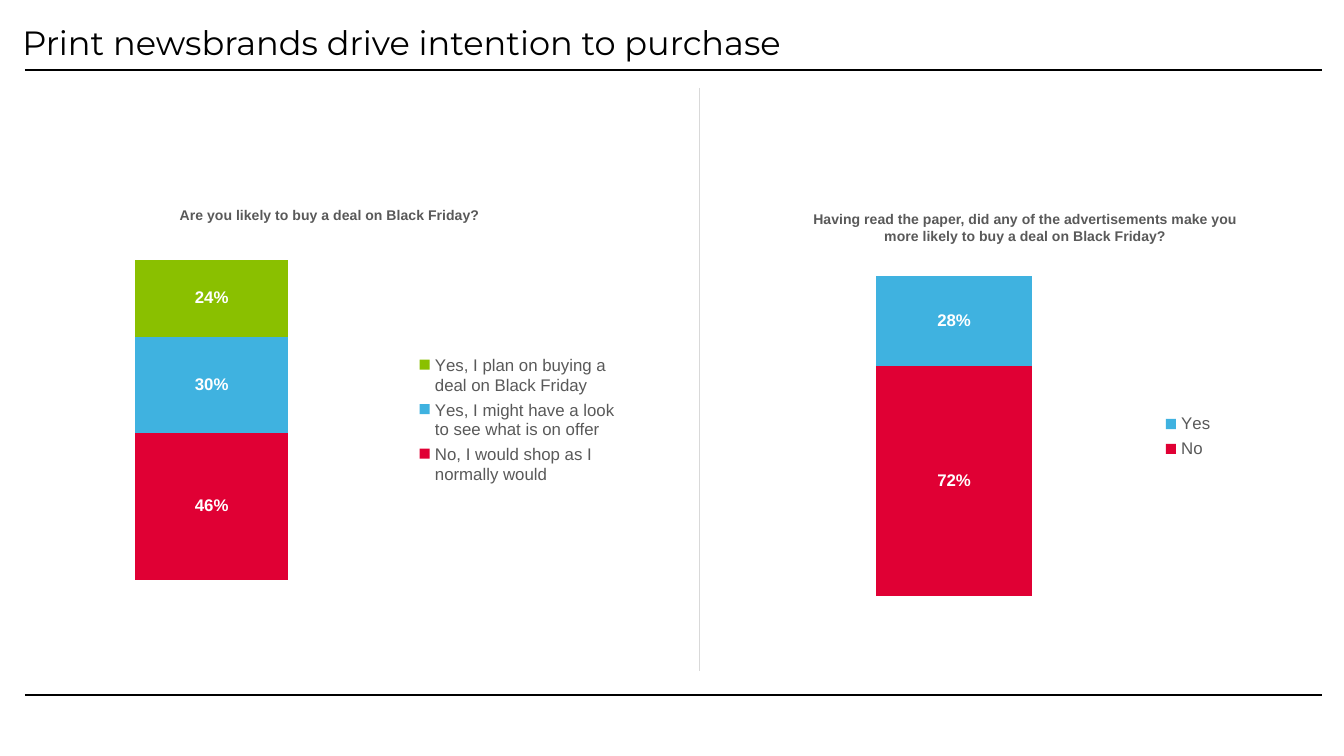
from dataclasses import dataclass

from lxml import etree
from pptx import Presentation
from pptx.chart.data import CategoryChartData
from pptx.dml.color import RGBColor
from pptx.enum.chart import XL_CHART_TYPE, XL_LABEL_POSITION, XL_LEGEND_POSITION
from pptx.enum.shapes import MSO_CONNECTOR
from pptx.enum.text import MSO_ANCHOR, PP_ALIGN
from pptx.oxml import parse_xml
from pptx.oxml.ns import nsdecls, qn
from pptx.util import Pt

PX = 914400 / 134.4
BLACK = RGBColor(0x00, 0x00, 0x00)
WHITE = RGBColor(0xFF, 0xFF, 0xFF)
GREY = RGBColor(0x59, 0x59, 0x59)
PALE_GREY = RGBColor(0xD9, 0xD9, 0xD9)
RED = RGBColor(0xE0, 0x00, 0x34)
BLUE = RGBColor(0x3F, 0xB2, 0xE0)
GREEN = RGBColor(0x8A, 0xC0, 0x00)

STACKED = XL_CHART_TYPE.COLUMN_STACKED_100
LABEL_CENTER = XL_LABEL_POSITION.CENTER
LEGEND_RIGHT = XL_LEGEND_POSITION.RIGHT
STRAIGHT = MSO_CONNECTOR.STRAIGHT
MIDDLE = MSO_ANCHOR.MIDDLE
LEFT, CENTER = PP_ALIGN.LEFT, PP_ALIGN.CENTER


@dataclass
class Area:
    left: int
    top: int
    width: int
    height: int

    def emu(self) -> tuple[int, ...]:
        return tuple(emu(px) for px in (self.left, self.top, self.width, self.height))


@dataclass
class Answer:
    label: str
    share: float
    color: RGBColor


@dataclass
class Question:
    text: str
    heading: Area
    chart: Area
    plot: Area  # measured from the chart's corner
    answers: list[Answer]


@dataclass
class Rule:
    start: tuple[int, int]
    end: tuple[int, int]
    color: RGBColor
    weight: float


RULES = [
    Rule((25, 70), (1322, 70), BLACK, 0.75),
    Rule((25, 695), (1322, 695), BLACK, 0.75),
    Rule((699, 88), (699, 671), PALE_GREY, 0.5),
]
QUESTIONS = [
    Question(
        "Are you likely to buy a deal on Black Friday?",
        Area(28, 199, 603, 31),
        Area(9, 254, 622, 333),
        Area(12, 6, 382, 320),
        [
            Answer("No, I would shop as I normally would", 0.46, RED),
            Answer("Yes, I might have a look to see what is on offer", 0.30, BLUE),
            Answer("Yes, I plan on buying a deal on Black Friday", 0.24, GREEN),
        ],
    ),
    Question(
        "Having read the paper, did any of the advertisements make you "
        "more likely to buy a deal on Black Friday?",
        Area(783, 204, 484, 47),
        Area(747, 270, 480, 333),
        Area(11, 6, 392, 320),
        [Answer("No", 0.72, RED), Answer("Yes", 0.28, BLUE)],
    ),
]


def emu(px: int) -> int:
    return round(px * PX)


def style_font(font, size: float, color: RGBColor, name: str = "Arial", bold: bool = False) -> None:
    font.name, font.size, font.bold = name, Pt(size), bold
    font.color.rgb = color


def fill_text(box, text: str, *, size: float, color: RGBColor, name: str = "Arial",
              bold: bool = False, align=CENTER, line_spacing: float = 1.0) -> None:
    frame = box.text_frame
    frame.word_wrap = True
    frame.vertical_anchor = MIDDLE
    para = frame.paragraphs[0]
    para.alignment, para.line_spacing = align, line_spacing
    span = para.add_run()
    span.text = text
    style_font(span.font, size, color, name, bold)


def draw_rule(page, rule: Rule) -> None:
    line = page.shapes.add_connector(STRAIGHT, *map(emu, rule.start + rule.end))
    line.line.color.rgb = rule.color
    line.line.width = Pt(rule.weight)
    etree.SubElement(line._element.spPr, qn("a:effectLst"))


def place_plot(chart, plot: Area, area: Area) -> None:
    """Fix the inner plot area as fractions of the chart."""
    fractions = {
        "x": plot.left / area.width,
        "y": plot.top / area.height,
        "w": plot.width / area.width,
        "h": plot.height / area.height,
    }
    modes = '<c:layoutTarget val="inner"/><c:xMode val="edge"/><c:yMode val="edge"/>'
    values = "".join(f'<c:{key} val="{value:.3f}"/>' for key, value in fractions.items())
    layout = parse_xml(
        f'<c:layout {nsdecls("c")}><c:manualLayout>{modes}{values}</c:manualLayout></c:layout>')
    plot_area = chart._chartSpace.chart.plotArea
    for old in plot_area.findall(qn("c:layout")):
        plot_area.remove(old)
    plot_area.insert(0, layout)


def draw_chart(page, question: Question) -> None:
    data = CategoryChartData(number_format="0%")
    data.categories = ["1"]
    for answer in question.answers:
        data.add_series(answer.label, [answer.share])
    chart = page.shapes.add_chart(STACKED, *question.chart.emu(), data).chart
    style_font(chart.font, 10, BLACK)
    chart.has_title = False
    chart.has_legend = True
    chart.legend.position = LEGEND_RIGHT
    chart.legend.include_in_layout = False
    style_font(chart.legend.font, 9, GREY)

    chart.category_axis.visible = False
    value_axis = chart.value_axis
    value_axis.visible = False
    value_axis.has_major_gridlines = False
    value_axis.minimum_scale, value_axis.maximum_scale = 0, 1
    value_axis.tick_labels.number_format = "0%"
    value_axis.tick_labels.number_format_is_linked = False

    bars = chart.plots[0]
    bars.gap_width, bars.overlap, bars.vary_by_categories = 150, 100, False
    for series, answer in zip(bars.series, question.answers):
        series.format.fill.solid()
        series.format.fill.fore_color.rgb = answer.color
        labels = series.data_labels
        labels.show_value = True
        labels.position = LABEL_CENTER
        labels.number_format = "0%"
        labels.number_format_is_linked = False
        style_font(labels.font, 9, WHITE, bold=True)
    place_plot(chart, question.plot, question.chart)


def draw_question(page, question: Question) -> None:
    draw_chart(page, question)
    heading = page.shapes.add_textbox(*question.heading.emu())
    fill_text(heading, question.text, size=7.5, color=GREY, bold=True)


def main() -> None:
    deck = Presentation()
    deck.slide_width, deck.slide_height = emu(1344), emu(756)
    page = deck.slides.add_slide(deck.slide_layouts[5])
    title = page.shapes.title
    title.left, title.top, title.width, title.height = Area(9, 19, 1312, 52).emu()
    fill_text(title, "Print newsbrands drive intention to purchase", size=18, color=BLACK,
              name="Montserrat", align=LEFT, line_spacing=0.9)
    for rule in RULES:
        draw_rule(page, rule)
    for question in QUESTIONS:
        draw_question(page, question)
    deck.save("out.pptx")


if __name__ == "__main__":
    main()
